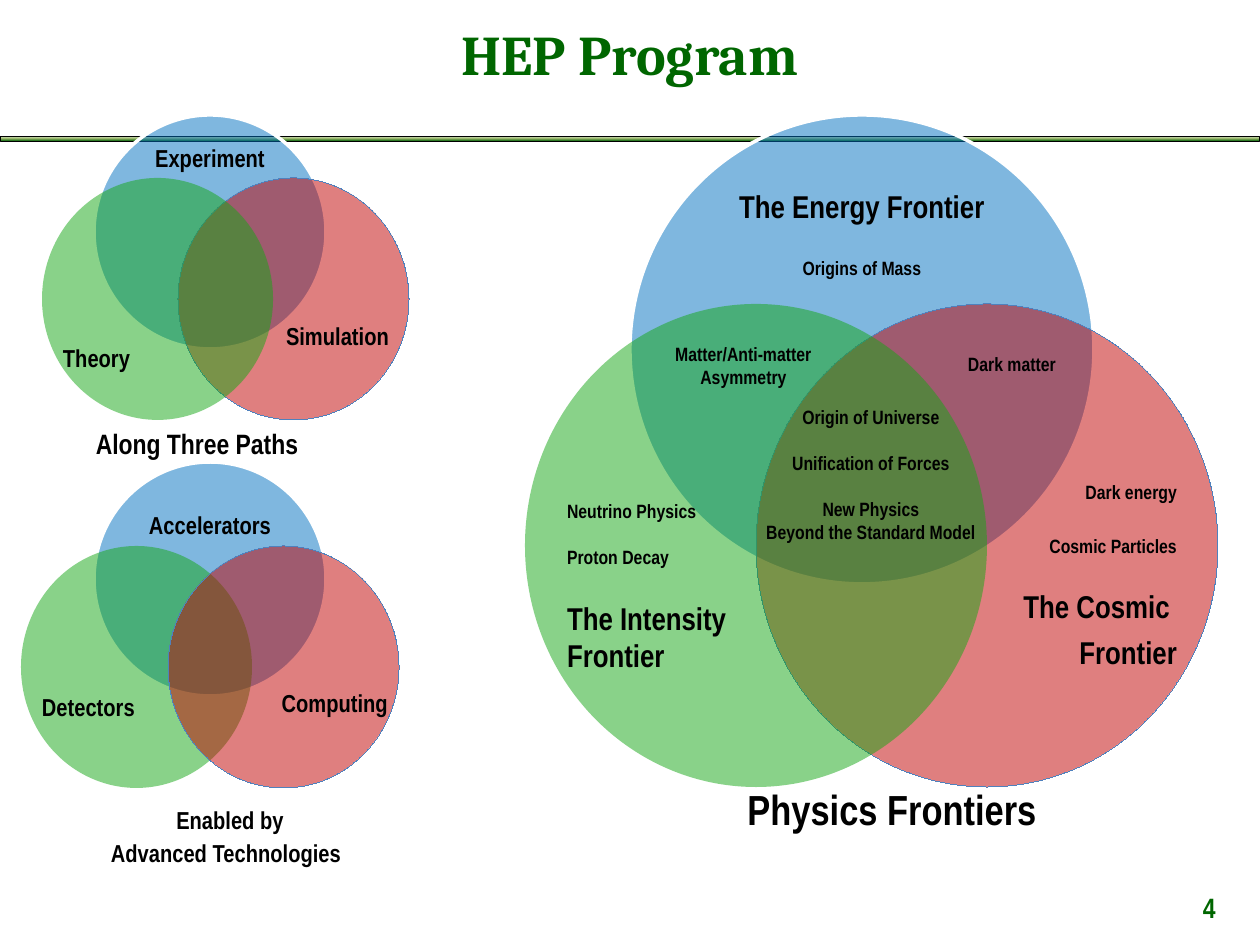
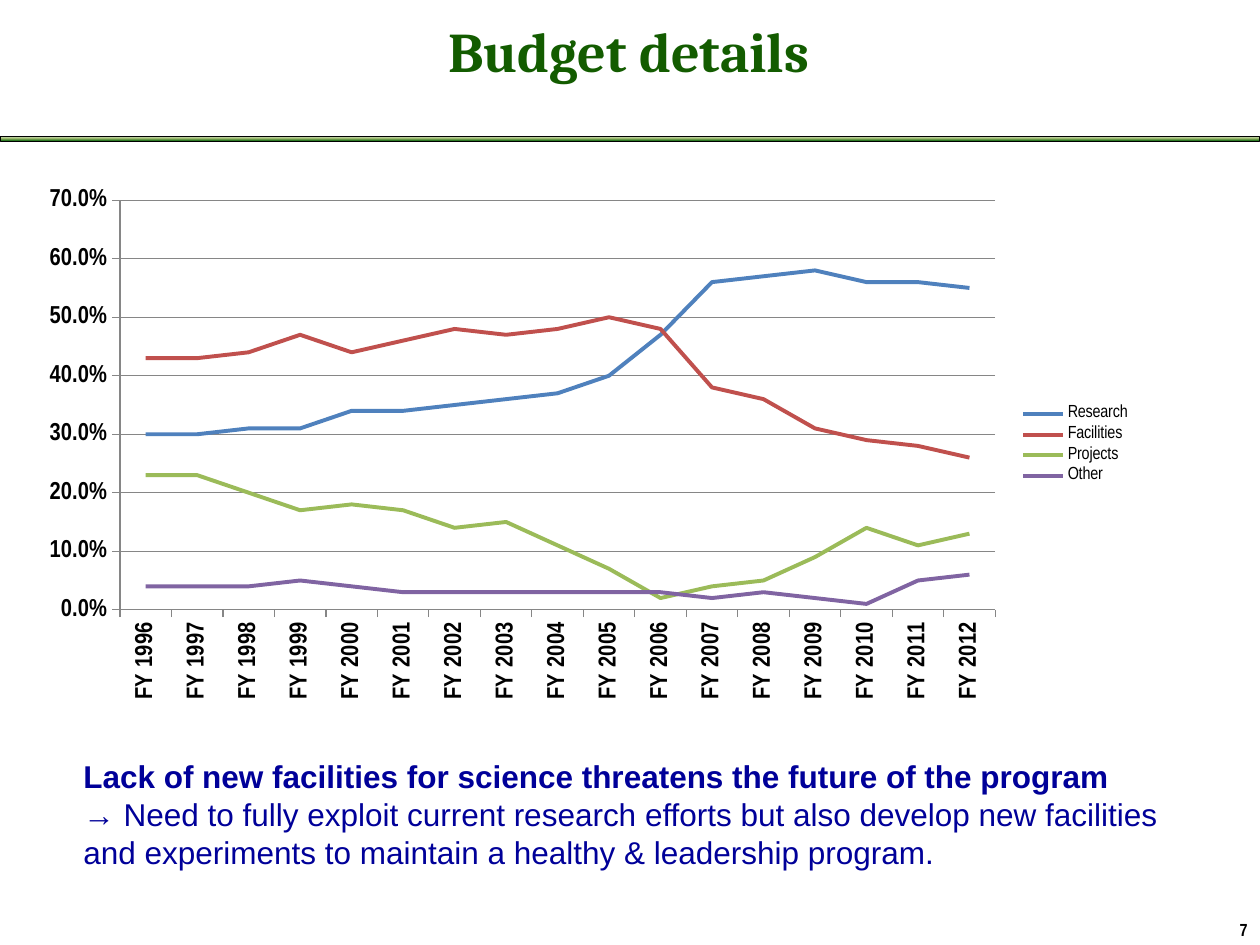
from copy import deepcopy
from dataclasses import dataclass

from lxml.etree import SubElement
from pptx import Presentation
from pptx.chart.data import CategoryChartData
from pptx.dml.color import RGBColor
from pptx.enum.chart import XL_CHART_TYPE, XL_LEGEND_POSITION, XL_TICK_MARK
from pptx.enum.shapes import MSO_SHAPE
from pptx.enum.text import MSO_ANCHOR, PP_ALIGN
from pptx.oxml import parse_xml
from pptx.oxml.ns import nsdecls, qn
from pptx.util import Emu, Pt

PX_PER_INCH = 126
PX_PER_PT = PX_PER_INCH / 72
LINE_HEIGHT = 1.22
L, C, R = PP_ALIGN.LEFT, PP_ALIGN.CENTER, PP_ALIGN.RIGHT


@dataclass(frozen=True)
class Theme:
    title_font: str = "Cambria"
    label_font: str = "Arial Narrow"
    body_font: str = "Arial"
    black: str = "000000"
    white: str = "FFFFFF"
    green: str = "006600"
    dark_green: str = "135C00"
    navy: str = "000099"
    grid: str = "868686"
    band: tuple = ("DDEBCF", "9CB86E", "156B13")
    title: int = 32
    figure: int = 24
    heading: int = 18
    caption: int = 16
    circle: int = 14
    topic: int = 11
    legend: int = 10


T = Theme()

# Circle kind: fill, outline colour, outline width in points
CIRCLES = {
    "blue": ("0070C0", T.white, 2),
    "red": ("C00000", "4F81BD", 0),
    "green": ("15A715", None, 0),
}

# Each diagram, back to front: kind, left, top, width, height
VENNS = [
    [("blue", 630, 115, 464, 469), ("red", 756, 304, 462, 483), ("green", 525, 304, 462, 483)],
    [("blue", 94, 115, 232, 234), ("red", 178, 178, 231, 242), ("green", 42, 178, 231, 242)],
    [("blue", 94, 462, 232, 234), ("green", 21, 546, 231, 242), ("red", 168, 546, 231, 242)],
]

# Lines, size, alignment, left, middle, width, points between lines
LABELS = [
    (["The Energy Frontier"], T.heading, C, 692, 206, 340, 0),
    (["Origins of Mass"], T.topic, C, 692, 267, 340, 0),
    (["Matter/Anti-matter", "Asymmetry"], T.topic, C, 650, 365, 187, 0),
    (["Dark matter"], T.topic, C, 955, 363, 114, 0),
    (["Origin of Universe", "Unification of Forces", "New Physics"], T.topic, C, 745, 463, 252, 13),
    (["Beyond the Standard Model"], T.topic, C, 745, 531, 252, 0),
    (["Neutrino Physics", "Proton Decay"], T.topic, L, 567, 534, 180, 13),
    (["The Intensity", "Frontier"], T.heading, L, 567, 636, 220, 0),
    (["Dark energy", "Cosmic Particles"], T.topic, R, 997, 519, 180, 18),
    (["The Cosmic ", "Frontier"], T.heading, R, 977, 629, 200, 5),
    (["Physics Frontiers"], T.figure, C, 682, 808, 420, 0),
    (["Experiment"], T.circle, C, 125, 158, 170, 0),
    (["Simulation"], T.circle, R, 239, 336, 150, 0),
    (["Theory"], T.circle, L, 63, 358, 136, 0),
    (["Along Three Paths"], T.caption, C, 84, 443, 226, 0),
    (["Accelerators"], T.circle, C, 125, 525, 170, 0),
    (["Detectors"], T.circle, L, 42, 707, 136, 0),
    (["Computing"], T.circle, R, 238, 703, 150, 0),
    (["Enabled by"], T.circle, C, 30, 820, 400, 0),
    (["Advanced Technologies"], T.circle, C, 26, 853, 400, 0),
]

YEARS = [f"FY {year}" for year in range(1996, 2013)]
# Name, line colour, whole percent of the budget by year
BUDGET = [
    ("Research", "4F81BD", [30, 30, 31, 31, 34, 34, 35, 36, 37, 40, 47, 56, 57, 58, 56, 56, 55]),
    ("Facilities", "C0504D", [43, 43, 44, 47, 44, 46, 48, 47, 48, 50, 48, 38, 36, 31, 29, 28, 26]),
    ("Projects", "9BBB59", [23, 23, 20, 17, 18, 17, 14, 15, 11, 7, 2, 4, 5, 9, 14, 11, 13]),
    ("Other", "8064A2", [4, 4, 4, 5, 4, 3, 3, 3, 3, 3, 3, 2, 3, 2, 1, 5, 6]),
]
CHART_BOX = (26, 179, 1118, 532)
PLOT_SHARE = {"x": 0.084, "y": 0.04, "w": 0.783, "h": 0.77}

MESSAGE = [
    ("Lack of new facilities for science threatens the future of the program", True),
    ("→ Need to fully exploit current research efforts but also develop new facilities "
     "and experiments to maintain a healthy & leadership program.", False),
]


def px(*lengths):
    return [Emu(round(n * 914400 / PX_PER_INCH)) for n in lengths]


def rgb(color):
    return RGBColor.from_string(color)


def style(font, name, size, color, bold=True):
    font.name, font.size, font.bold = name, Pt(size), bold
    font.color.rgb = rgb(color)


def add_text(slide, box, lines, size, color=T.black, font=T.label_font, align=L,
             anchor=MSO_ANCHOR.TOP, inset=True, gap=0):
    """Add one paragraph per line; a line is a string, or a pair of string and bold."""
    frame = slide.shapes.add_textbox(*px(*box)).text_frame
    frame.word_wrap = True
    frame.vertical_anchor = anchor
    if not inset:
        frame.margin_left = frame.margin_top = frame.margin_right = frame.margin_bottom = 0
    for i, line in enumerate(lines):
        text, bold = (line, True) if isinstance(line, str) else line
        paragraph = frame.paragraphs[0] if i == 0 else frame.add_paragraph()
        paragraph.text = text
        paragraph.alignment = align
        paragraph.space_before = Pt(gap if i else 0)
        style(paragraph.font, font, size, color, bold)


def add_band(slide):
    band = slide.shapes.add_shape(MSO_SHAPE.RECTANGLE, *px(0, 136, 1260, 5))
    band.shadow.inherit = False
    band.line.color.rgb = rgb(T.black)
    band.line.width = Pt(0.5)
    band.fill.gradient()
    band.fill.gradient_angle = 270
    stops = band._element.spPr.find(".//" + qn("a:gsLst"))
    stops.append(deepcopy(stops[0]))
    for i, (stop, color) in enumerate(zip(band.fill.gradient_stops, T.band)):
        stop.position = i / 2
        stop.color.rgb = rgb(color)


def add_page(deck, title, title_box, title_color):
    slide = deck.slides.add_slide(deck.slide_layouts[6])
    add_band(slide)
    add_text(slide, title_box, [title], T.title, title_color, T.title_font, C, MSO_ANCHOR.MIDDLE)
    return slide


def add_circle(slide, kind, *box):
    fill, outline, width = CIRCLES[kind]
    circle = slide.shapes.add_shape(MSO_SHAPE.OVAL, *px(*box))
    circle.shadow.inherit = False
    circle.fill.solid()
    circle.fill.fore_color.rgb = rgb(fill)
    properties = circle._element.spPr
    color = properties.find(qn("a:solidFill")).find(qn("a:srgbClr"))
    SubElement(color, qn("a:alpha"), val="50000")
    if outline:
        circle.line.color.rgb = rgb(outline)
        # A zero width must be written out to give a hairline
        properties.find(qn("a:ln")).set("w", str(Pt(width)))
    else:
        circle.line.fill.background()


def add_label(slide, lines, size, align, left, middle, width, gap):
    """Centre the lines on the height given by middle."""
    points = len(lines) * size * LINE_HEIGHT + (len(lines) - 1) * gap
    height = round(points * PX_PER_PT)
    add_text(slide, (left, middle - height // 2, width, height), lines, size,
             align=align, anchor=MSO_ANCHOR.MIDDLE, inset=False, gap=gap)


def add_budget_chart(slide):
    data = CategoryChartData(number_format="0.0%")
    data.categories = YEARS
    for name, _, percents in BUDGET:
        data.add_series(name, [percent / 100 for percent in percents])
    chart = slide.shapes.add_chart(XL_CHART_TYPE.LINE, *px(*CHART_BOX), data).chart
    chart.has_title = False
    style(chart.font, T.label_font, T.legend, T.black, False)
    chart.has_legend = True
    chart.legend.position = XL_LEGEND_POSITION.RIGHT
    chart.legend.include_in_layout = False

    for series, (_, color, _) in zip(chart.plots[0].series, BUDGET):
        series.smooth = False
        series.format.line.color.rgb = rgb(color)
        series.format.line.width = Pt(2.25)

    shares, years = chart.value_axis, chart.category_axis
    shares.minimum_scale, shares.maximum_scale, shares.major_unit = 0, 0.7, 0.1
    shares.has_major_gridlines = True
    shares.tick_labels.number_format = "0.0%"
    shares.tick_labels.number_format_is_linked = False
    for axis in (shares, years):
        axis.major_tick_mark = XL_TICK_MARK.OUTSIDE
        style(axis.tick_labels.font, T.label_font, T.circle, T.black)
    for line in (shares.format.line, years.format.line, shares.major_gridlines.format.line):
        line.color.rgb = rgb(T.grid)
        line.width = Pt(0.75)
    years._element.find(qn("c:txPr")).find(qn("a:bodyPr")).set("rot", "-5400000")

    plot_area = chart._chartSpace.chart.plotArea
    for layout in plot_area.findall(qn("c:layout")):
        plot_area.remove(layout)
    modes = "".join(f'<c:{side}Mode val="edge"/>' for side in "xy")
    places = "".join(f'<c:{side} val="{share}"/>' for side, share in PLOT_SHARE.items())
    plot_area.insert(0, parse_xml(
        f'<c:layout {nsdecls("c")}><c:manualLayout><c:layoutTarget val="inner"/>'
        f"{modes}{places}</c:manualLayout></c:layout>"))


def add_program(deck):
    slide = add_page(deck, "HEP Program", (0, 0, 1260, 106), T.green)
    for venn in VENNS:
        for circle in venn:
            add_circle(slide, *circle)
    for label in LABELS:
        add_label(slide, *label)
    add_text(slide, (1175, 884, 53, 60), ["4"], T.caption, T.green, align=R)


def add_budget(deck):
    slide = add_page(deck, "Budget details", (70, 0, 1118, 100), T.dark_green)
    add_budget_chart(slide)
    add_text(slide, (71, 751, 1120, 165), MESSAGE, T.heading, T.navy, T.body_font)
    add_text(slide, (1208, 913, 52, 32), ["7"], T.legend, align=R)


def main():
    deck = Presentation()
    deck.slide_width, deck.slide_height = px(1260, 945)
    add_program(deck)
    add_budget(deck)
    deck.save("out.pptx")


if __name__ == "__main__":
    main()
